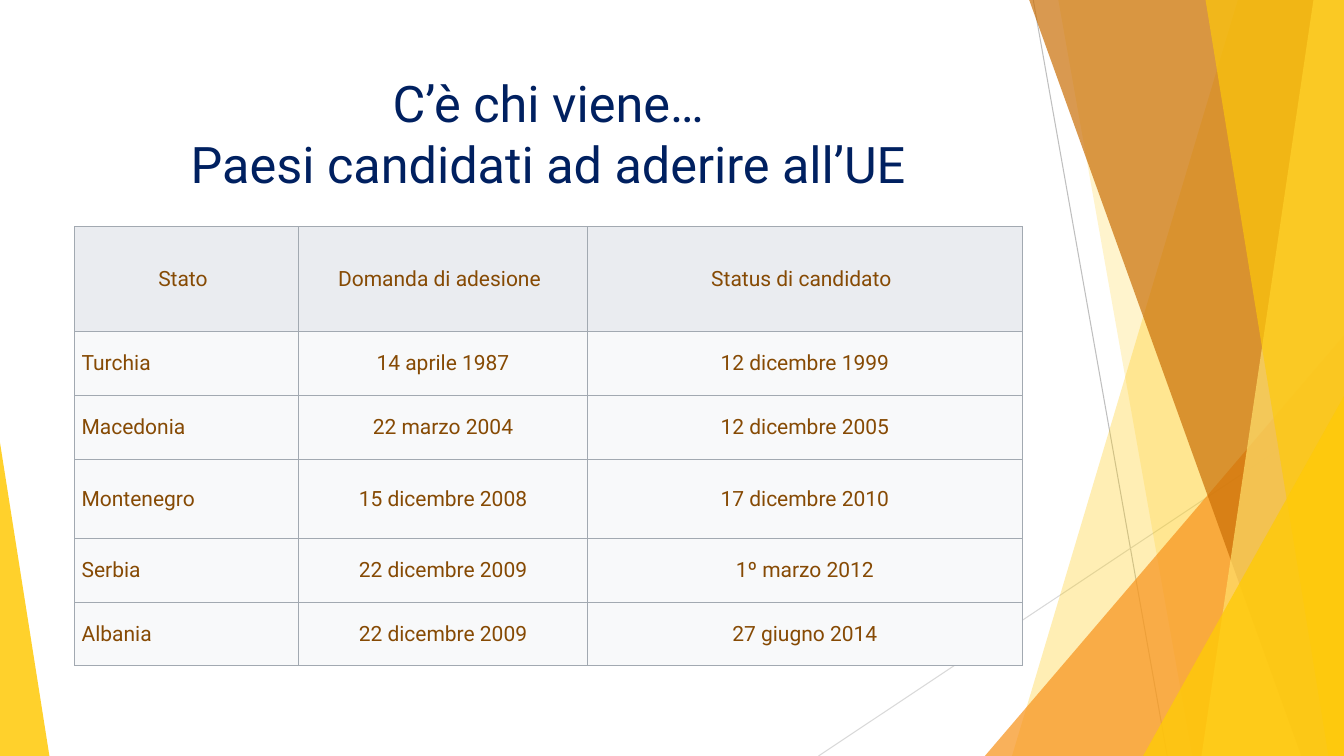
from itertools import accumulate

from lxml import etree
from pptx import Presentation
from pptx.dml.color import RGBColor
from pptx.enum.shapes import MSO_CONNECTOR, MSO_SHAPE
from pptx.enum.text import MSO_ANCHOR, MSO_AUTO_SIZE, PP_ALIGN
from pptx.oxml.ns import qn
from pptx.util import Inches, Pt

LINE, TRI = MSO_CONNECTOR.STRAIGHT, MSO_SHAPE.ISOSCELES_TRIANGLE
TOP, MID = MSO_ANCHOR.TOP, MSO_ANCHOR.MIDDLE
LEFT, CENTER = PP_ALIGN.LEFT, PP_ALIGN.CENTER
NO_FIT = MSO_AUTO_SIZE.NONE
WIDE, HIGH = Inches(13.333), Inches(7.5)
FONT = "Roboto"
GOLD = "FFCA08"

# Boxes as left, top, width, height in percent of the slide
PAGE = (0, 0, 100, 100)
HEAD = (5.55, 8.93, 70.5, 19.2)
GRID = (5.55, 30, 70.5, 58.1)

# Thin lines, bands and triangles, in percent of their box
RULES = [((76.88, 0), (86.85, 100), "BFBFBF"),
         ((100, 53.73), (60.9, 100), "D9D9D9")]
# Each band runs from a slanted left edge (top x, foot x) to the right side
BACK = [(92.1, 75.3, GOLD, 30), (78.75, 88.73, GOLD, 20)]
FRONT = [(76.58, 96.83, "CA6F06", 70), (97.73, 89.4, "FFDF6B", 70),
         (89.7, 98.85, GOLD, 65)]
# left, top, width, tip, colour, opacity; all stand on the foot of the box
ORANGE = (73.28, 44.4, 26.72, 1, "F8931D", 72)
CORNER = (85.05, 52.4, 14.95, 1, GOLD, 80)
WEDGE = (0, 58.53, 3.68, 0, GOLD, 85)

# Table content and shares of its box
COLS = (23.62, 30.53, 45.85)
ROWS = (23.9, 14.55, 14.55, 17.9, 14.55, 14.55)
DATA = [
    ("Stato", "Domanda di adesione", "Status di candidato"),
    ("Turchia", "14 aprile 1987", "12 dicembre 1999"),
    ("Macedonia", "22 marzo 2004", "12 dicembre 2005"),
    ("Montenegro", "15 dicembre 2008", "17 dicembre 2010"),
    ("Serbia", "22 dicembre 2009", "1º marzo 2012"),
    ("Albania", "22 dicembre 2009", "27 giugno 2014"),
]


def color(code):
    return RGBColor.from_string(code)


def spot(box, x, y):
    """Turn percent of a box into a point on the slide."""
    return (round(WIDE * (box[0] + box[2] * x / 100) / 100),
            round(HIGH * (box[1] + box[3] * y / 100) / 100))


def frame(box):
    x, y = spot(box, 0, 0)
    right, foot = spot(box, 100, 100)
    return x, y, right - x, foot - y


def write(body, text, size, tint, align=CENTER):
    para = body.paragraphs[0]
    para.text = text
    para.alignment = align
    for run in para.runs:
        run.font.name = FONT
        run.font.size = Pt(size)
        run.font.color.rgb = color(tint)


def paint(shape, tint, alpha):
    shape.shadow.inherit = False
    shape.line.fill.background()
    shape.fill.solid()
    shape.fill.fore_color.rgb = color(tint)
    node = shape.fill._xPr.find(".//" + qn("a:srgbClr"))
    etree.SubElement(node, qn("a:alpha"), val=str(alpha * 1000))


def rule(slide, box, start, end, tint):
    line = slide.shapes.add_connector(LINE, *spot(box, *start), *spot(box, *end))
    line.line.color.rgb = color(tint)
    line.line.width = Pt(0.75)
    etree.SubElement(line._element.spPr, qn("a:effectLst"))


def band(slide, box, top, foot, tint, alpha):
    pen = slide.shapes.build_freeform(*spot(box, top, 0))
    edge = [(100, 0), (100, 100), (foot, 100)]
    pen.add_line_segments([spot(box, *point) for point in edge])
    paint(pen.convert_to_shape(), tint, alpha)


def wedge(slide, box, left, top, width, tip, tint, alpha):
    x, y = spot(box, left, top)
    right, foot = spot(box, left + width, 100)
    shape = slide.shapes.add_shape(TRI, x, y, right - x, foot - y)
    shape.adjustments[0] = tip
    paint(shape, tint, alpha)


def decor(slide, box):
    for item in RULES:
        rule(slide, box, *item)
    for item in BACK:
        band(slide, box, *item)
    wedge(slide, box, *ORANGE)
    for item in FRONT:
        band(slide, box, *item)
    wedge(slide, box, *CORNER)
    wedge(slide, box, *WEDGE)


def title(slide, box):
    head = slide.shapes.title
    head.left, head.top, head.width, head.height = frame(box)
    body = head.text_frame
    body.word_wrap = True
    body.auto_size = NO_FIT
    body.vertical_anchor = TOP
    write(body, "C’è chi viene…\vPaesi candidati ad aderire all’UE", 36, "002060")


def border(cell, tint):
    props = cell._tc.get_or_add_tcPr()
    for spot_no, side in enumerate(("lnL", "lnR", "lnT", "lnB")):
        line = etree.Element(qn("a:" + side), w=str(Pt(0.75)))
        fill = etree.SubElement(line, qn("a:solidFill"))
        etree.SubElement(fill, qn("a:srgbClr"), val=tint)
        props.insert(spot_no, line)


def sizes(total, shares):
    """Split a length by shares so that the parts fill it exactly."""
    ends = [round(total * end / 100) for end in accumulate(shares)]
    return [end - start for start, end in zip([0] + ends, ends)]


def table(slide, box):
    place = frame(box)
    grid = slide.shapes.add_table(len(ROWS), len(COLS), *place).table
    for col, width in zip(grid.columns, sizes(place[2], COLS)):
        col.width = width
    for row, height in zip(grid.rows, sizes(place[3], ROWS)):
        row.height = height
    for r, line in enumerate(DATA):
        for c, text in enumerate(line):
            cell = grid.cell(r, c)
            name = r > 0 and c == 0
            cell.margin_top = cell.margin_bottom = Inches(0.02)
            cell.margin_left = Inches(0.07 if name else 0.02)
            cell.margin_right = Inches(0.02 if r else 0.09)
            cell.vertical_anchor = MID
            cell.fill.solid()
            cell.fill.fore_color.rgb = color("F8F9FA" if r else "EAECF0")
            border(cell, "A2A9B1")
            write(cell.text_frame, text, 15, "864A04", LEFT if name else CENTER)


def main():
    deck = Presentation()
    deck.slide_width, deck.slide_height = WIDE, HIGH
    slide = deck.slides.add_slide(deck.slide_layouts[5])
    decor(slide, PAGE)
    title(slide, HEAD)
    table(slide, GRID)
    deck.save("out.pptx")


if __name__ == "__main__":
    main()
